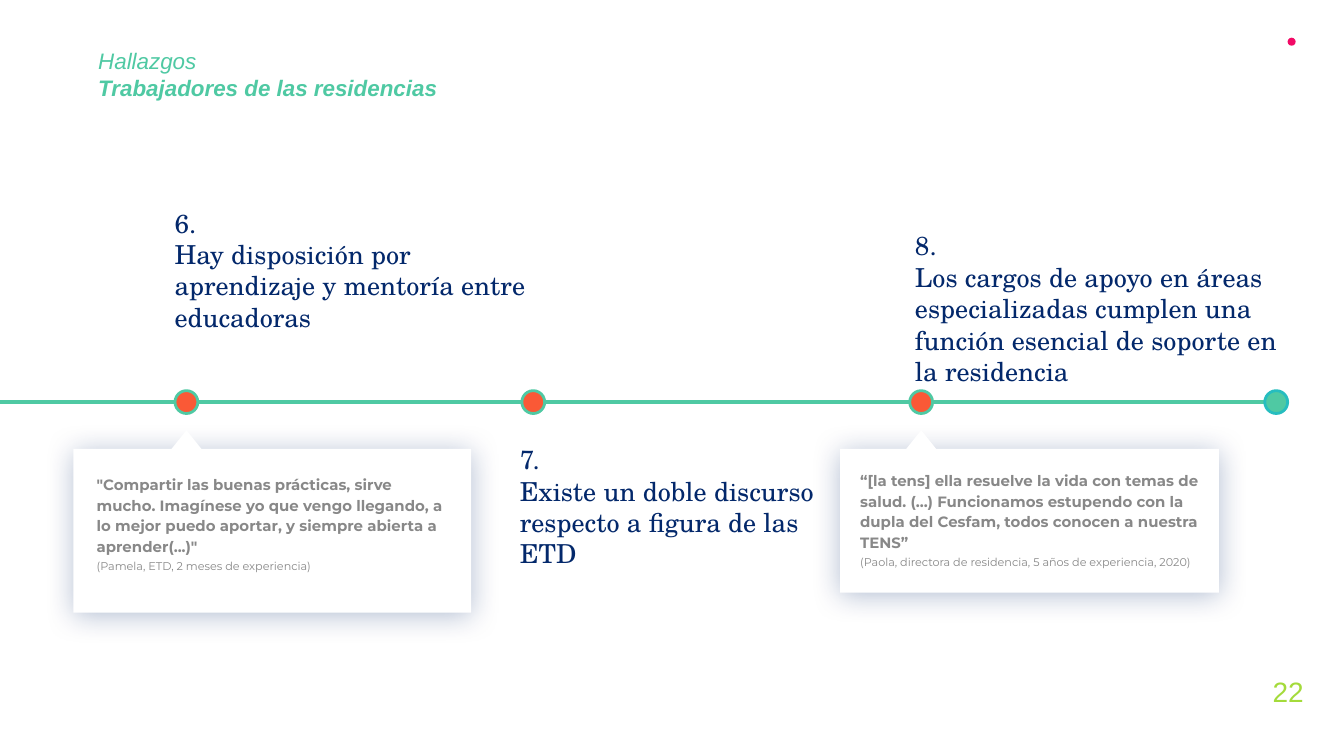
from dataclasses import dataclass
from lxml.etree import SubElement
from pptx import Presentation
from pptx.dml.color import RGBColor
from pptx.enum.shapes import MSO_CONNECTOR, MSO_SHAPE
from pptx.enum.text import MSO_ANCHOR, MSO_AUTO_SIZE, PP_ALIGN
from pptx.oxml.ns import qn
from pptx.util import Pt


@dataclass(frozen=True)
class Theme:
    green: str = "4FC9A3"
    teal: str = "26BDBF"
    orange: str = "FA5936"
    pink: str = "F20A66"
    lime: str = "A4DB3B"
    navy: str = "03286B"
    gray: str = "888888"
    white: str = "FFFFFF"
    sans: str = "Arial"
    serif: str = "TeX Gyre Schola"
    round: str = "Montserrat"
    head: int = 12
    page: int = 15
    point: int = 14
    quote: int = 8
    source: int = 6


theme = Theme()
DOT = 12.24


def apply(target, values):
    for key, value in values.items():
        setattr(target, key, value)


def place(shape, box):
    apply(shape, dict(zip(("left", "top", "width", "height"), map(Pt, box))))


def write(shape, lines, color, pads=(7.2,) * 4, para={}, wrap=True):
    frame = shape.text_frame
    sides = ("margin_left", "margin_top", "margin_right", "margin_bottom")
    apply(frame, dict(zip(sides, map(Pt, pads))))
    apply(frame, {"word_wrap": wrap, "auto_size": MSO_AUTO_SIZE.NONE,
                  "vertical_anchor": MSO_ANCHOR.TOP})
    for i, (text, font) in enumerate(lines):
        line = frame.add_paragraph() if i else frame.paragraphs[0]
        apply(line, {"alignment": PP_ALIGN.LEFT, **para})
        if i == 0:
            line.space_before = Pt(0)
        run = line.add_run()
        run.text = text
        apply(run.font, font)
        run.font.color.rgb = RGBColor.from_string(color)


def add_text(slide, box, lines, color, **kind):
    write(slide.shapes.add_textbox(*map(Pt, box)), lines, color, **kind)


def add_form(shapes, kind, box, fill, edge=None):
    shape = shapes.add_shape(kind, *map(Pt, box))
    shape.shadow.inherit = False
    shape.fill.solid()
    shape.fill.fore_color.rgb = RGBColor.from_string(fill)
    if edge:
        shape.line.color.rgb = RGBColor.from_string(edge)
        shape.line.width = Pt(1.5)
    else:
        shape.line.fill.background()
    return shape


def add_head(slide, box, top, bold):
    title = slide.shapes.title
    place(title, box)
    base = {"name": theme.sans, "size": Pt(theme.head), "italic": True}
    write(title, [(top, base), (bold, {**base, "bold": True})], theme.green)


def add_page(slide, box, number):
    font = {"name": theme.sans, "size": Pt(theme.page)}
    add_text(slide, box, [(number, font)], theme.lime,
             pads=(0, 0.72, 0, 0), wrap=False)


def add_track(slide, box, stops):
    left, top, width, height = box
    mid = top + height / 2
    line = slide.shapes.add_connector(
        MSO_CONNECTOR.STRAIGHT, Pt(left), Pt(mid), Pt(left + width), Pt(mid))
    line.line.color.rgb = RGBColor.from_string(theme.green)
    line.line.width = Pt(2.25)
    SubElement(line.element.spPr, qn("a:effectLst"))
    marks = [(x, theme.orange, theme.green) for x in stops]
    marks.append((left + width + 0.5, theme.green, theme.teal))
    for x, fill, edge in marks:
        spot = (x - DOT / 2, top, DOT, height)
        add_form(slide.shapes, MSO_SHAPE.OVAL, spot, fill, edge)


def add_point(slide, box, lines):
    font = {"name": theme.serif, "size": Pt(theme.point)}
    add_text(slide, box, [(text, font) for text in lines], theme.navy)


def add_glow(shape):
    effect = shape.element.spPr.find(qn("a:effectLst"))
    glow = SubElement(effect, qn("a:outerShdw"), blurRad=str(Pt(15.8)),
                      dist=str(Pt(1.5)), dir="5400000", algn="ctr",
                      rotWithShape="0")
    color = SubElement(glow, qn("a:srgbClr"), val=theme.navy)
    SubElement(color, qn("a:alpha"), val="30000")


def add_quote(slide, box, stop, inset, quote, source):
    left, top, width, height = box
    dx, dy, wide = inset
    group = slide.shapes.add_group_shape().shapes
    add_glow(add_form(group, MSO_SHAPE.RECTANGLE, box, theme.white))
    tip = (stop - 11.5, top - 10, 23, 14.4)
    add_form(group, MSO_SHAPE.ISOSCELES_TRIANGLE, tip, theme.white)
    lines = [
        (quote, {"name": theme.round, "size": Pt(theme.quote), "bold": True}),
        (source, {"name": theme.round, "size": Pt(theme.source)}),
    ]
    add_text(slide, (left + dx, top + dy, wide, 31), lines, theme.gray,
             pads=(0, 3, 0, 0),
             para={"line_spacing": 1.15, "space_before": Pt(1)})


def main():
    deck = Presentation()
    apply(deck, {"slide_width": Pt(720), "slide_height": Pt(405)})
    slide = deck.slides.add_slide(deck.slide_layouts[5])
    stops = (99.9, 285.7, 493.5)

    add_head(slide, (45.4, 18, 254, 31),
             "Hallazgos", "Trabajadores de las residencias")
    add_page(slide, (681.8, 360.7, 17.3, 18.7), "22")
    add_form(slide.shapes, MSO_SHAPE.OVAL, (689.8, 20.2, 4.3, 4.3), theme.pink)
    add_track(slide, (-37.4, 209.3, 720.6, DOT), stops)

    points = [
        ((86.4, 103.7, 203, 51),
         ("6.", "Hay disposición por aprendizaje y mentoría entre",
          "educadoras")),
        ((271.4, 230.4, 180.7, 51),
         ("7.", "Existe un doble discurso", "respecto a figura de las ETD")),
        ((483.1, 115.9, 213.1, 51),
         ("8.", "Los cargos de apoyo en áreas", "especializadas cumplen una",
          "función esencial de soporte en la residencia")),
    ]
    for box, lines in points:
        add_point(slide, box, lines)

    add_quote(slide, (39.4, 240.5, 213.1, 87.8), stops[0], (12.4, 10.1, 191.5),
              "\"Compartir las buenas prácticas, sirve mucho. Imagínese yo que "
              "vengo llegando, a lo mejor puedo aportar, y siempre abierta a "
              "aprender(...)\"",
              "(Pamela, ETD, 2 meses de experiencia)")
    add_quote(slide, (450, 240.5, 203, 77), stops[2], (10.8, 7.9, 185),
              "“[la tens] ella resuelve la vida con temas de salud. (...) "
              "Funcionamos estupendo con la dupla del Cesfam, todos conocen a "
              "nuestra TENS”",
              "(Paola, directora de residencia, 5 años de experiencia, 2020)")
    deck.save("out.pptx")


if __name__ == "__main__":
    main()
